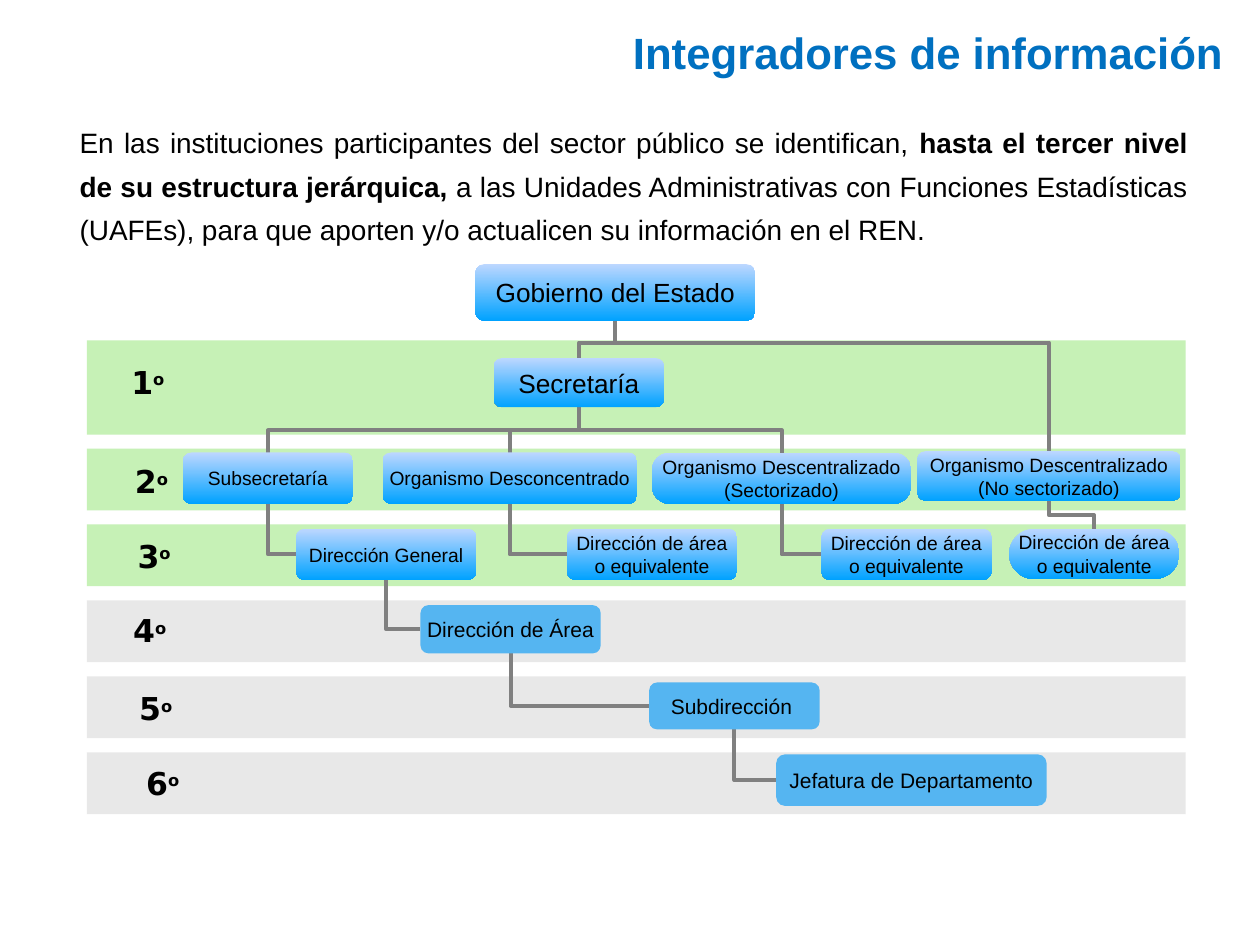
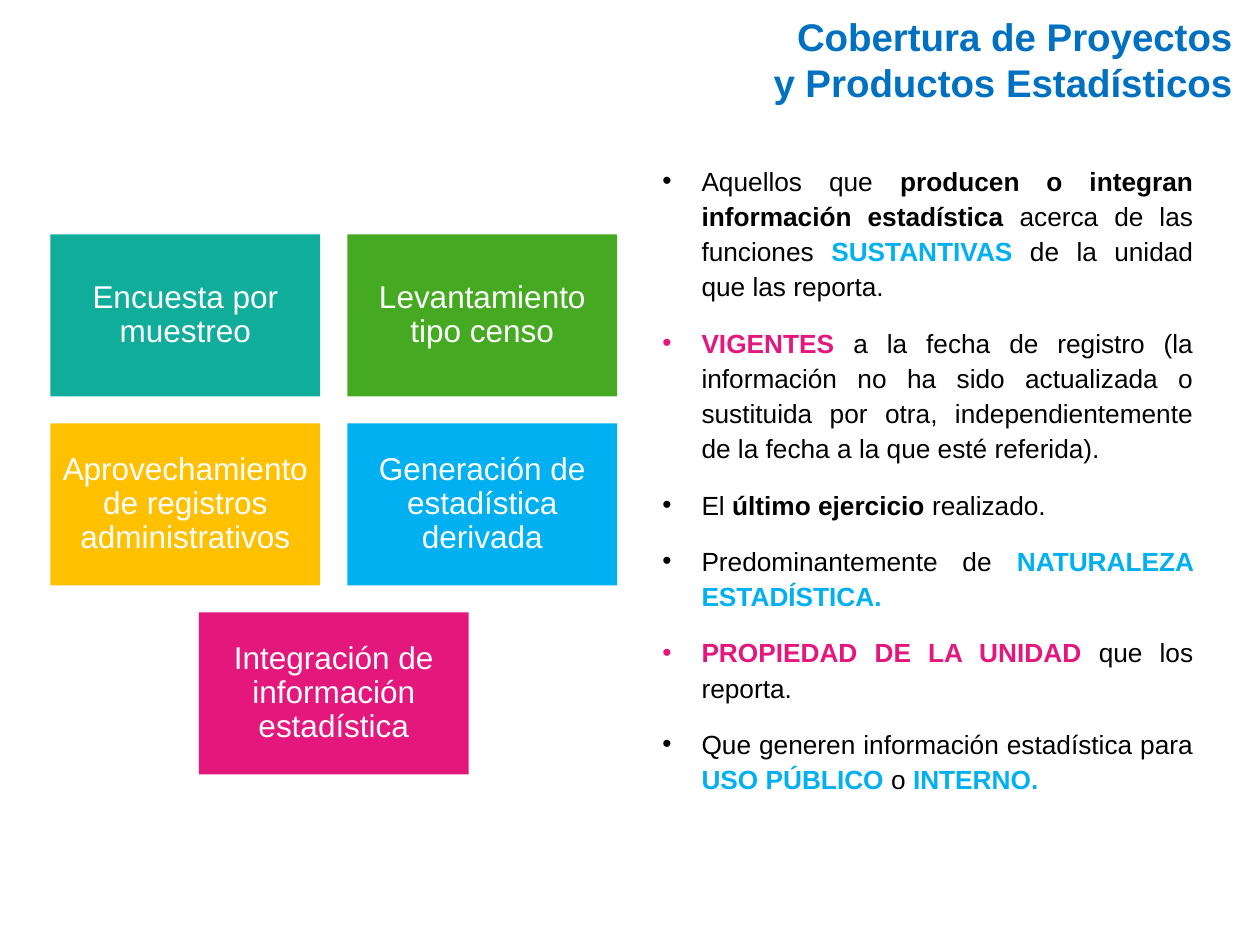
"""Builds two slides on the integration and coverage of statistical information."""
import dataclasses
import typing

import lxml.etree
import pptx
import pptx.dml.color
import pptx.enum.shapes
import pptx.enum.text
import pptx.oxml.ns
import pptx.shapes.autoshape
import pptx.shapes.connector
import pptx.slide
import pptx.text.text
import pptx.util

Pt = pptx.util.Pt
RGB = pptx.dml.color.RGBColor
SHAPE = pptx.enum.shapes.MSO_SHAPE
ALIGN = pptx.enum.text.PP_ALIGN
ANCHOR = pptx.enum.text.MSO_ANCHOR
qn = pptx.oxml.ns.qn

TITLE_BLUE = RGB(0x00, 0x70, 0xC0)
BLACK = RGB(0x00, 0x00, 0x00)
WHITE = RGB(0xFF, 0xFF, 0xFF)
BAND_GREEN = RGB(0xA0, 0xE8, 0x86)
BAND_GRAY = RGB(0xD9, 0xD9, 0xD9)
LINE_GRAY = RGB(0x80, 0x80, 0x80)
BOX_TOP = RGB(0xBD, 0xD7, 0xFF)
BOX_BOTTOM = RGB(0x00, 0xA2, 0xFF)
BOX_FLAT = RGB(0x55, 0xB5, 0xF1)
TEAL = RGB(0x10, 0xAD, 0x9B)
GREEN = RGB(0x45, 0xAA, 0x21)
AMBER = RGB(0xFF, 0xC0, 0x00)
CYAN = RGB(0x00, 0xB0, 0xF0)
PINK = RGB(0xE4, 0x17, 0x7D)
FONT = "Arial"
LEVEL_FONT = "DejaVu Sans"


class Span(typing.NamedTuple):
    text: str
    bold: bool = False
    color: RGB = BLACK


class Level(typing.NamedTuple):
    top: float
    height: float
    color: RGB
    label_top: float
    label_width: float


@dataclasses.dataclass(frozen=True)
class Unit:
    text: str
    left: float
    top: float
    width: float
    height: float
    size: float = 11
    flat: bool = False
    corner: float = 0.167


class Tile(typing.NamedTuple):
    text: str
    column: float
    row: int
    color: RGB


BAND_TOP, BAND_PITCH, BAND_HEIGHT = 256.3, 43.4, 35.3
LEVELS = [Level(194.6, 53.8, BAND_GREEN, 203.8, 33)] + [
    Level(BAND_TOP + i * BAND_PITCH, BAND_HEIGHT, color, label_top, width)
    for i, (color, label_top, width) in enumerate([
        (BAND_GREEN, 260.6, 37), (BAND_GREEN, 303.1, 40), (BAND_GRAY, 345.6, 35),
        (BAND_GRAY, 390.4, 42), (BAND_GRAY, 432.9, 50)])
]

AREA = "Dirección de área\no equivalente"
UNITS = {
    "state": Unit("Gobierno del Estado", 271.5, 150.9, 160.2, 32.4, 15),
    "ministry": Unit("Secretaría", 282.2, 204.6, 97.2, 28.1, 15),
    "under": Unit("Subsecretaría", 104.5, 258.6, 97.2, 29.3),
    "deconcentrated": Unit("Organismo Desconcentrado", 218.6, 258.6, 145.4, 29.3),
    "sector": Unit("Organismo Descentralizado\n(Sectorizado)",
                   372.5, 258.6, 148.3, 29.3, corner=0.353),
    "no_sector": Unit("Organismo Descentralizado\n(No sectorizado)",
                      524.2, 257.8, 150.5, 28.3),
    "general": Unit("Dirección General", 169.2, 302.2, 103, 29.2),
    "area_deconcentrated": Unit(AREA, 324, 302.2, 97.2, 29.2),
    "area_sector": Unit(AREA, 469.4, 302.2, 97.2, 29.2),
    "area_no_sector": Unit(AREA, 576.7, 302.2, 97.2, 28.6, corner=0.5),
    "area": Unit("Dirección de Área", 240.3, 345.8, 103, 27.6, 12, True),
    "subdivision": Unit("Subdirección ", 371, 390, 97.4, 26.8, 12, True),
    "department": Unit("Jefatura de Departamento", 443.6, 431.1, 154.5, 29.4, 12, True),
}
BRANCHES = [
    ("state", ["ministry", "no_sector"], 195.8),
    ("ministry", ["under", "deconcentrated", "sector"], 246),
    ("no_sector", ["area_no_sector"], 294.5),
]
ELBOWS = [
    ("under", "general"), ("deconcentrated", "area_deconcentrated"),
    ("sector", "area_sector"), ("general", "area"),
    ("area", "subdivision"), ("subdivision", "department"),
]
INTRO = [[
    Span("En las instituciones participantes del sector público se identifican, "),
    Span("hasta el tercer nivel de su estructura jerárquica, ", True),
    Span("a las Unidades Administrativas con Funciones Estadísticas (UAFEs), "
         "para que aporten y/o actualicen su información en el REN."),
]]

TILE_LEFT, TILE_TOP, TILE_WIDTH, TILE_HEIGHT = 28.8, 133.9, 154.2, 92.6
COLUMN_PITCH, ROW_PITCH = 169.7, 108
TILES = [
    Tile("Encuesta por muestreo", 0, 0, TEAL),
    Tile("Levantamiento tipo censo", 1, 0, GREEN),
    Tile("Aprovechamiento de registros administrativos", 0, 1, AMBER),
    Tile("Generación de estadística derivada", 1, 1, CYAN),
    Tile("Integración de información estadística", 0.5, 2, PINK),
]
CRITERIA = [
    [Span("Aquellos que "), Span("producen o integran información estadística ", True),
     Span("acerca de las funciones "), Span("SUSTANTIVAS", True, CYAN),
     Span(" de la unidad que las reporta.")],
    [Span("VIGENTES", True, PINK),
     Span(" a la fecha de registro (la información no ha sido actualizada o sustituida "
          "por otra, independientemente de la fecha a la que esté referida).")],
    [Span("El "), Span("último ejercicio ", True), Span("realizado.")],
    [Span("Predominantemente de "), Span("NATURALEZA ESTADÍSTICA.", True, CYAN)],
    [Span("PROPIEDAD DE LA UNIDAD ", True, PINK), Span("que los reporta.")],
    [Span("Que generen información estadística para "), Span("USO PÚBLICO ", True, CYAN),
     Span("o "), Span("INTERNO.", True, CYAN)],
]


def style_run(r: pptx.text.text._Run, size: float, color: RGB,
              bold: bool = False, name: str = FONT) -> None:
    r.font.name, r.font.size, r.font.bold = name, Pt(size), bold
    r.font.color.rgb = color


def fill_text(tf: pptx.text.text.TextFrame, text: str, size: float, color: RGB,
              align: ALIGN = ALIGN.CENTER, bold: bool = False,
              spacing: float = 1.0) -> None:
    tf.text = text
    tf.vertical_anchor = ANCHOR.MIDDLE
    for p in tf.paragraphs:
        p.alignment, p.line_spacing = align, spacing
        for r in p.runs:
            style_run(r, size, color, bold)


def set_margins(tf: pptx.text.text.TextFrame, margin: float) -> None:
    tf.margin_left = tf.margin_right = tf.margin_top = tf.margin_bottom = Pt(margin)


def add_titled_slide(prs: pptx.presentation.Presentation, title: str, left: float,
                     top: float, height: float, size: float) -> pptx.slide.Slide:
    s = prs.slides.add_slide(prs.slide_layouts[5])
    sp = s.shapes.title
    sp.left, sp.top, sp.width, sp.height = Pt(left), Pt(top), Pt(521.3), Pt(height)
    sp.text_frame.auto_size = pptx.enum.text.MSO_AUTO_SIZE.NONE
    fill_text(sp.text_frame, title, size, TITLE_BLUE, ALIGN.RIGHT, True)
    return s


def add_plain_shape(s: pptx.slide.Slide, kind: SHAPE, left: float, top: float,
                    width: float, height: float,
                    color: RGB) -> pptx.shapes.autoshape.Shape:
    sp = s.shapes.add_shape(kind, Pt(left), Pt(top), Pt(width), Pt(height))
    sp.shadow.inherit = False
    sp.fill.solid()
    sp.fill.fore_color.rgb = color
    sp.line.fill.background()
    return sp


def add_rich_text(s: pptx.slide.Slide, left: float, top: float, width: float,
                  height: float, paragraphs: list[list[Span]], size: float,
                  spacing: float, bullets: bool = False) -> None:
    tf = s.shapes.add_textbox(Pt(left), Pt(top), Pt(width), Pt(height)).text_frame
    tf.word_wrap = True
    for i, spans in enumerate(paragraphs):
        p = tf.add_paragraph() if i else tf.paragraphs[0]
        p.alignment, p.line_spacing = ALIGN.JUSTIFY, spacing
        if bullets:
            p.space_after = Pt(12)
            pPr = p._p.get_or_add_pPr()
            pPr.set("marL", str(Pt(22.4)))
            pPr.set("indent", str(-Pt(22.4)))
            lxml.etree.SubElement(pPr, qn("a:buFont"), typeface=FONT)
            lxml.etree.SubElement(pPr, qn("a:buChar"), char="•")
        for span in spans:
            r = p.add_run()
            r.text = span.text
            style_run(r, size, span.color, span.bold)


def add_band(s: pptx.slide.Slide, level: Level) -> None:
    sp = add_plain_shape(s, SHAPE.RECTANGLE, 49.7, level.top, 627.8, level.height,
                         level.color)
    clr = sp.element.spPr.find(f"{qn('a:solidFill')}/{qn('a:srgbClr')}")
    lxml.etree.SubElement(clr, qn("a:alpha"), val="60000")


def add_level_label(s: pptx.slide.Slide, number: int, level: Level) -> None:
    tf = s.shapes.add_textbox(Pt(68), Pt(level.label_top), Pt(level.label_width),
                              Pt(28)).text_frame
    tf.word_wrap = False
    tf.margin_left = tf.margin_right = Pt(0)
    p = tf.paragraphs[0]
    p.alignment = ALIGN.CENTER
    for text, size in ((str(number), 18), ("o", 16)):
        r = p.add_run()
        r.text = text
        style_run(r, size, BLACK, True, LEVEL_FONT)
    r.font._element.set("baseline", "30000")


def add_unit(s: pptx.slide.Slide, unit: Unit) -> pptx.shapes.autoshape.Shape:
    sp = add_plain_shape(s, SHAPE.ROUNDED_RECTANGLE, unit.left, unit.top, unit.width,
                         unit.height, BOX_FLAT)
    sp.adjustments[0] = unit.corner
    if not unit.flat:
        sp.fill.gradient()
        sp.fill.gradient_angle = 270
        for stop, color in zip(sp.fill.gradient_stops, (BOX_TOP, BOX_BOTTOM)):
            stop.color.rgb = color
    set_margins(sp.text_frame, 0)
    sp.text_frame.word_wrap = False
    fill_text(sp.text_frame, unit.text, unit.size, BLACK)
    return sp


def add_bent_line(s: pptx.slide.Slide, begin: pptx.shapes.autoshape.Shape,
                  begin_side: int, end: pptx.shapes.autoshape.Shape, end_side: int,
                  front: pptx.shapes.autoshape.Shape) -> pptx.shapes.connector.Connector:
    c = s.shapes.add_connector(pptx.enum.shapes.MSO_CONNECTOR.ELBOW, 0, 0, 0, 0)
    c.begin_connect(begin, begin_side)
    c.end_connect(end, end_side)
    c.line.color.rgb, c.line.width = LINE_GRAY, Pt(2.25)
    lxml.etree.SubElement(c.element.spPr, qn("a:effectLst"))
    front.element.addprevious(c.element)
    return c


def add_branch(s: pptx.slide.Slide, parent: pptx.shapes.autoshape.Shape,
               child: pptx.shapes.autoshape.Shape, bus: int,
               front: pptx.shapes.autoshape.Shape) -> None:
    c = add_bent_line(s, parent, 2, child, 0, front)
    to_right = c.end_x > c.begin_x
    bend = round(100000 * (bus - c.begin_y) / (c.end_y - c.begin_y))
    left, top, width, height = c.left, c.top, c.width, c.height
    c.left, c.top = left + (width - height) // 2, top + (height - width) // 2
    c.width, c.height = height, width
    xfrm = c.element.spPr.find(qn("a:xfrm"))
    xfrm.set("rot", "16200000" if to_right else "5400000")
    xfrm.set("flipH", "1" if to_right else "0")
    guides = c.element.spPr.find(f"{qn('a:prstGeom')}/{qn('a:avLst')}")
    lxml.etree.SubElement(guides, qn("a:gd"), name="adj1", fmla=f"val {bend}")


def add_elbow(s: pptx.slide.Slide, parent: pptx.shapes.autoshape.Shape,
              child: pptx.shapes.autoshape.Shape,
              front: pptx.shapes.autoshape.Shape) -> None:
    c = add_bent_line(s, child, 1, parent, 2, front)
    c.element.spPr.find(qn("a:prstGeom")).set("prst", "bentConnector2")


def build_integrators(prs: pptx.presentation.Presentation) -> None:
    s = add_titled_slide(prs, "Integradores de información", 184.6, 10.8, 37.4, 25)
    for level in LEVELS:
        add_band(s, level)
    boxes = {key: add_unit(s, unit) for key, unit in UNITS.items()}
    front = boxes["state"]
    for parent, children, bus in BRANCHES:
        for child in children:
            add_branch(s, boxes[parent], boxes[child], Pt(bus), front)
    for parent, child in ELBOWS:
        add_elbow(s, boxes[parent], boxes[child], front)
    for number, level in enumerate(LEVELS, 1):
        add_level_label(s, number, level)
    add_rich_text(s, 38.4, 62.4, 647.3, 82.8, INTRO, 16, 1.3)


def build_coverage(prs: pptx.presentation.Presentation) -> None:
    s = add_titled_slide(prs, "Cobertura de Proyectos\ny Productos Estadísticos",
                         190.3, 3.4, 60.5, 22)
    add_rich_text(s, 371.4, 88.5, 317.5, 371.5, CRITERIA, 15, 1.12, True)
    for tile in TILES:
        sp = add_plain_shape(s, SHAPE.RECTANGLE, TILE_LEFT + tile.column * COLUMN_PITCH,
                             TILE_TOP + tile.row * ROW_PITCH, TILE_WIDTH, TILE_HEIGHT,
                             tile.color)
        set_margins(sp.text_frame, 5)
        sp.text_frame.word_wrap = True
        fill_text(sp.text_frame, tile.text, 18, WHITE, spacing=0.9)


def main() -> None:
    prs = pptx.Presentation()
    prs.slide_width, prs.slide_height = Pt(720), Pt(540)
    build_integrators(prs)
    build_coverage(prs)
    prs.save("out.pptx")


if __name__ == "__main__":
    main()
